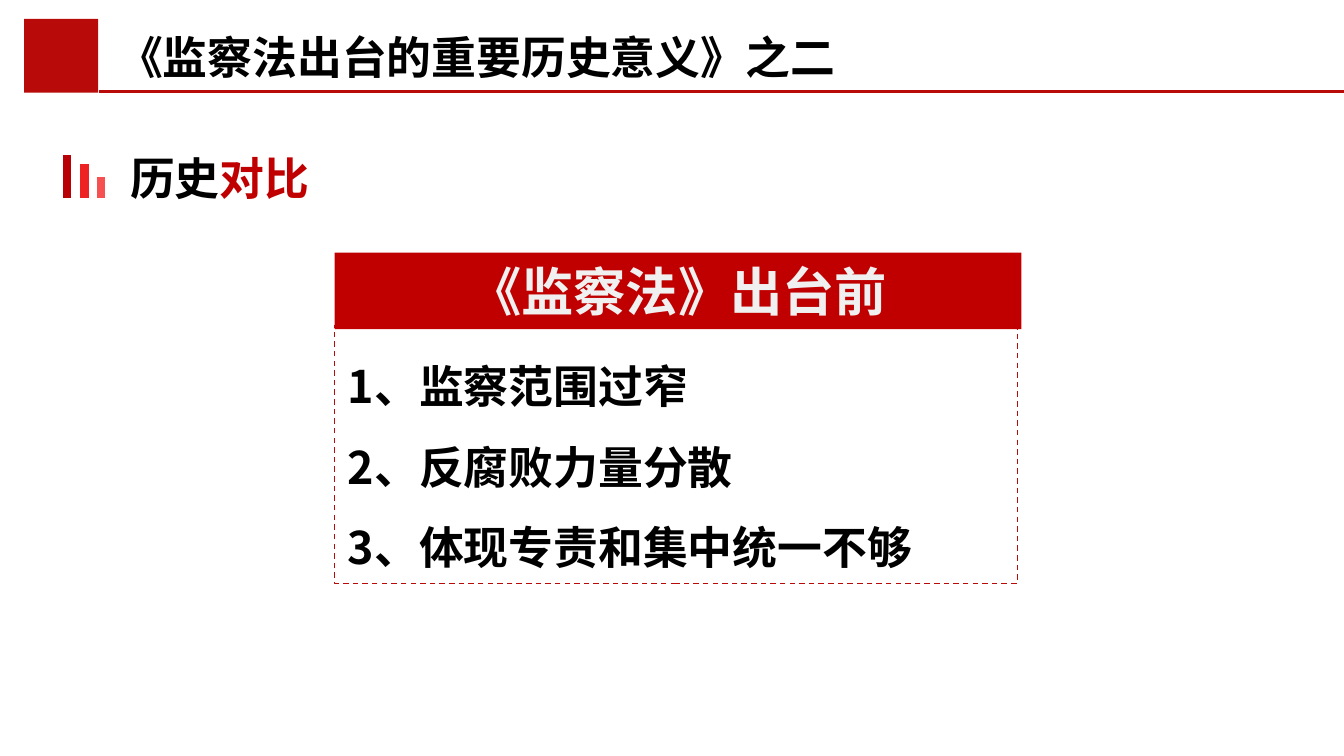
"""Build the slide on the situation before the Supervision Law."""
from lxml.etree import SubElement
from pptx import Presentation
from pptx.dml.color import RGBColor
from pptx.enum.dml import MSO_LINE
from pptx.enum.shapes import MSO_CONNECTOR, MSO_SHAPE
from pptx.enum.text import MSO_ANCHOR, PP_ALIGN
from pptx.oxml.ns import qn
from pptx.util import Inches, Pt

CJK = "Noto Sans CJK SC"
RED = "B80B09"
DEEP_RED = "C00000"


def color(value):
    return RGBColor.from_string(value)


def write(box, lines, format_values, wrap=True):
    frame = box.text_frame
    frame.word_wrap = wrap
    frame.vertical_anchor = MSO_ANCHOR.TOP
    for index, spans in enumerate(lines):
        para = frame.paragraphs[0] if index == 0 else frame.add_paragraph()
        for name, value in format_values.items():
            setattr(para, name, value)
        for text, font_name, size, text_color in spans:
            span = para.add_run()
            span.text = text
            for name, value in {"name": font_name, "size": Pt(size), "bold": True}.items():
                setattr(span.font, name, value)
            span.font.color.rgb = color(text_color)
            SubElement(span.font._element, qn("a:ea")).set("typeface", CJK)


deck = Presentation()
deck.slide_width = Inches(10)
deck.slide_height = deck.slide_width * 9 // 16
page = deck.slides.add_slide(deck.slide_layouts[6])

boxes = {}
for name, left, top, width, height, fill in (
    ("corner", 0.18, 0.14, 0.55, 0.55, RED),
    ("points", 2.49, 2.42, 5.08, 1.92, None),
    ("banner", 2.49, 1.88, 5.11, 0.57, DEEP_RED),
):
    box = page.shapes.add_shape(
        MSO_SHAPE.RECTANGLE, Inches(left), Inches(top), Inches(width), Inches(height)
    )
    box.shadow.inherit = False
    if fill:
        box.fill.solid()
        box.fill.fore_color.rgb = color(fill)
        box.line.fill.background()
    else:
        box.fill.background()
        box.line.color.rgb = color(RED)
        box.line.width = Pt(0.75)
        box.line.dash_style = MSO_LINE.DASH
    boxes[name] = box

points = ("1、监察范围过窄", "2、反腐败力量分散", "3、体现专责和集中统一不够")
write(
    boxes["points"],
    [[(point, CJK, 24, "000000")] for point in points],
    {"alignment": PP_ALIGN.LEFT, "line_spacing": 1.5},
)
write(
    boxes["banner"],
    [[("《监察法》出台前", CJK, 28, "F0F0F0")]],
    {"alignment": PP_ALIGN.CENTER},
)

for left, top, width, spans in (
    (0.87, 1.07, 1.55, [("历史", "Arial", 24, "000000"), ("对比", "Arial", 24, DEEP_RED)]),
    (0.78, 0.17, 5.59, [("《监察法出台的重要历史意义》之二", CJK, 24, "000000")]),
):
    box = page.shapes.add_textbox(Inches(left), Inches(top), Inches(width), Inches(0.5))
    write(box, [spans], {"alignment": PP_ALIGN.LEFT}, wrap=False)

for start_x, start_y, end_x, end_y, line_color, weight in (
    (0.74, 0.68, 10, 0.68, RED, 1.5),
    (0.5, 1.47, 0.5, 1.15, "B80106", 4.5),
    (0.63, 1.47, 0.63, 1.22, "EE2222", 4.5),
    (0.75, 1.47, 0.75, 1.32, "F65050", 4.5),
):
    line = page.shapes.add_connector(
        MSO_CONNECTOR.STRAIGHT, Inches(start_x), Inches(start_y), Inches(end_x), Inches(end_y)
    )
    line.line.color.rgb = color(line_color)
    line.line.width = Pt(weight)
    SubElement(line._element.spPr, qn("a:effectLst"))

deck.save("out.pptx")
